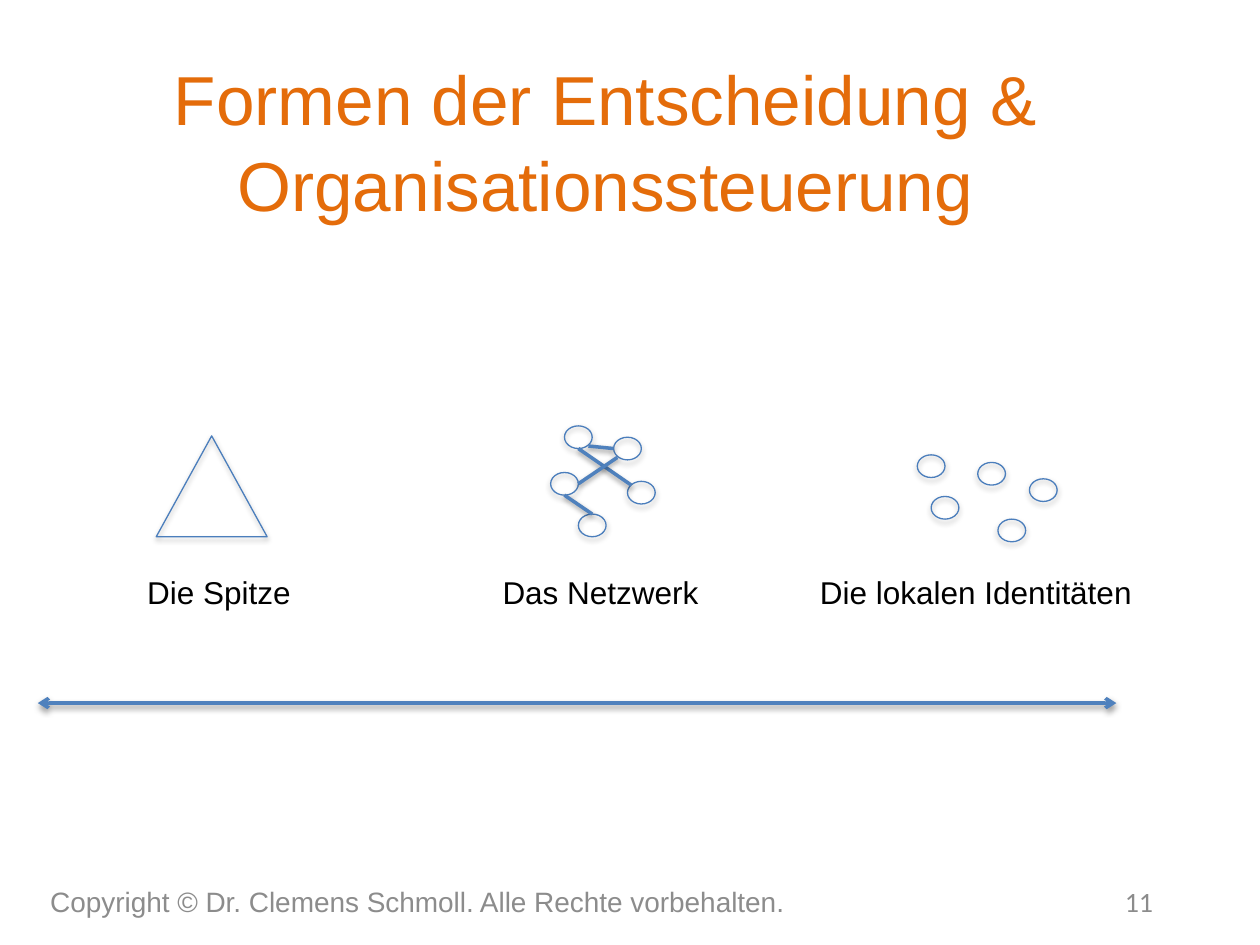
from lxml.etree import SubElement
from pptx import Presentation
from pptx.dml.color import RGBColor
from pptx.enum.shapes import MSO_CONNECTOR, MSO_SHAPE
from pptx.enum.text import MSO_ANCHOR, MSO_AUTO_SIZE, PP_ALIGN
from pptx.oxml.ns import qn
from pptx.util import Inches, Pt

NODE_SIZE = (0.22, 0.18)
NETWORK_NODES = [(4.37, 3.75), (4.87, 3.47), (4.98, 3.82), (4.59, 4.08), (4.48, 3.38)]
NETWORK_LINKS = [
    (4.67, 3.54, 4.87, 3.56),
    (4.59, 3.56, 5.01, 3.85),
    (4.9, 3.63, 4.59, 3.84),
    (4.48, 3.93, 4.7, 4.08),
]
LOCAL_NODES = [(7.76, 3.67), (8.17, 3.8), (7.39, 3.94), (7.92, 4.12), (7.28, 3.61)]
LABELS = [
    ("Die Spitze", 1.07, 1.35),
    ("Das Netzwerk", 3.89, 1.77),
    ("Die lokalen Identitäten", 6.41, 2.7),
]


def color(value):
    """Turn a hex string into a colour."""
    return RGBColor.from_string(value)


def set_shadow(shape, distance, opacity):
    """Give a shape a soft black shadow falling straight down."""
    effects = SubElement(shape._element.spPr, qn("a:effectLst"))
    shadow = SubElement(
        effects, qn("a:outerShdw"), blurRad=str(Pt(3.1)), dist=str(Pt(distance)),
        dir="5400000", rotWithShape="0",
    )
    black = SubElement(shadow, qn("a:srgbClr"), val="000000")
    SubElement(black, qn("a:alpha"), val=str(opacity * 1000))


def set_line(shape, line_color, width):
    """Set the colour and width of a line or outline."""
    shape.line.color.rgb = color(line_color)
    shape.line.width = Pt(width)


def add_outline(shapes, kind, left, top, width, height):
    """Add an unfilled shape with a thin blue outline."""
    shape = shapes.add_shape(kind, Inches(left), Inches(top), Inches(width), Inches(height))
    shape.fill.background()
    set_line(shape, "4B7EBC", 0.75)
    shape.shadow.inherit = True
    set_shadow(shape, 1.8, 35)


def add_nodes(shapes, positions):
    """Add one small ellipse at each position."""
    for left, top in positions:
        add_outline(shapes, MSO_SHAPE.OVAL, left, top, *NODE_SIZE)


def add_line(shapes, start_x, start_y, end_x, end_y, arrows=False):
    """Add a blue line, with arrowheads at both ends if wanted."""
    line = shapes.add_connector(
        MSO_CONNECTOR.STRAIGHT, Inches(start_x), Inches(start_y), Inches(end_x), Inches(end_y)
    )
    set_line(line, "4F81BD", 2)
    if arrows:
        for end in ("a:headEnd", "a:tailEnd"):
            SubElement(line.line._get_or_add_ln(), qn(end), type="arrow")
    set_shadow(line, 1.6, 38)


def format_paragraph(paragraph, size, font_name, font_color, alignment):
    """Set the font and alignment of a paragraph."""
    paragraph.alignment = alignment
    paragraph.font.size = Pt(size)
    paragraph.font.name = font_name
    paragraph.font.color.rgb = color(font_color)


def set_title(slide, text):
    """Place, fill and format the title placeholder."""
    title = slide.shapes.title
    title.left, title.top = Inches(0.43), Inches(0.48)
    title.width, title.height = Inches(8.75), Inches(1.25)
    frame = title.text_frame
    frame.text = text
    frame.auto_size = MSO_AUTO_SIZE.NONE
    frame.vertical_anchor = MSO_ANCHOR.MIDDLE
    paragraph = frame.paragraphs[0]
    paragraph.line_spacing = 1.04
    format_paragraph(paragraph, 39.6, "Arial", "E46C0A", PP_ALIGN.CENTER)


def add_text(slide, text, left, top, width, size=18, font_name="Arial", font_color="000000",
             alignment=PP_ALIGN.LEFT, anchor=MSO_ANCHOR.TOP, wrap=False):
    """Add a one-line text box."""
    box = slide.shapes.add_textbox(Inches(left), Inches(top), Inches(width), Inches(0.4))
    frame = box.text_frame
    frame.word_wrap = wrap
    frame.vertical_anchor = anchor
    frame.text = text
    format_paragraph(frame.paragraphs[0], size, font_name, font_color, alignment)


def add_footer(slide, text, left, width, font_name, alignment):
    """Add a grey text at the foot of the slide."""
    add_text(slide, text, left, 6.95, width, 16, font_name, "8C8C8C", alignment,
             MSO_ANCHOR.MIDDLE, True)


def add_network(slide):
    """Add the group of linked nodes."""
    group = slide.shapes.add_group_shape()
    add_nodes(group.shapes, NETWORK_NODES)
    for link in NETWORK_LINKS:
        add_line(group.shapes, *link)


def main():
    """Build and save the slide."""
    presentation = Presentation()
    presentation.slide_width, presentation.slide_height = Inches(10), Inches(7.5)
    slide = presentation.slides.add_slide(presentation.slide_layouts[5])
    set_title(slide, "Formen der Entscheidung & Organisationssteuerung")
    add_network(slide)
    add_outline(slide.shapes, MSO_SHAPE.ISOSCELES_TRIANGLE, 1.24, 3.46, 0.88, 0.8)
    add_line(slide.shapes, 0.3, 5.58, 8.86, 5.58, arrows=True)
    add_nodes(slide.shapes, LOCAL_NODES)
    for text, left, width in LABELS:
        add_text(slide, text, left, 4.5, width)
    add_footer(slide, "Copyright © Dr. Clemens Schmoll. Alle Rechte vorbehalten.",
               0.3, 6.36, "Arial", PP_ALIGN.LEFT)
    add_footer(slide, "11", 6.92, 2.33, "Calibri", PP_ALIGN.RIGHT)
    presentation.save("out.pptx")


if __name__ == "__main__":
    main()
